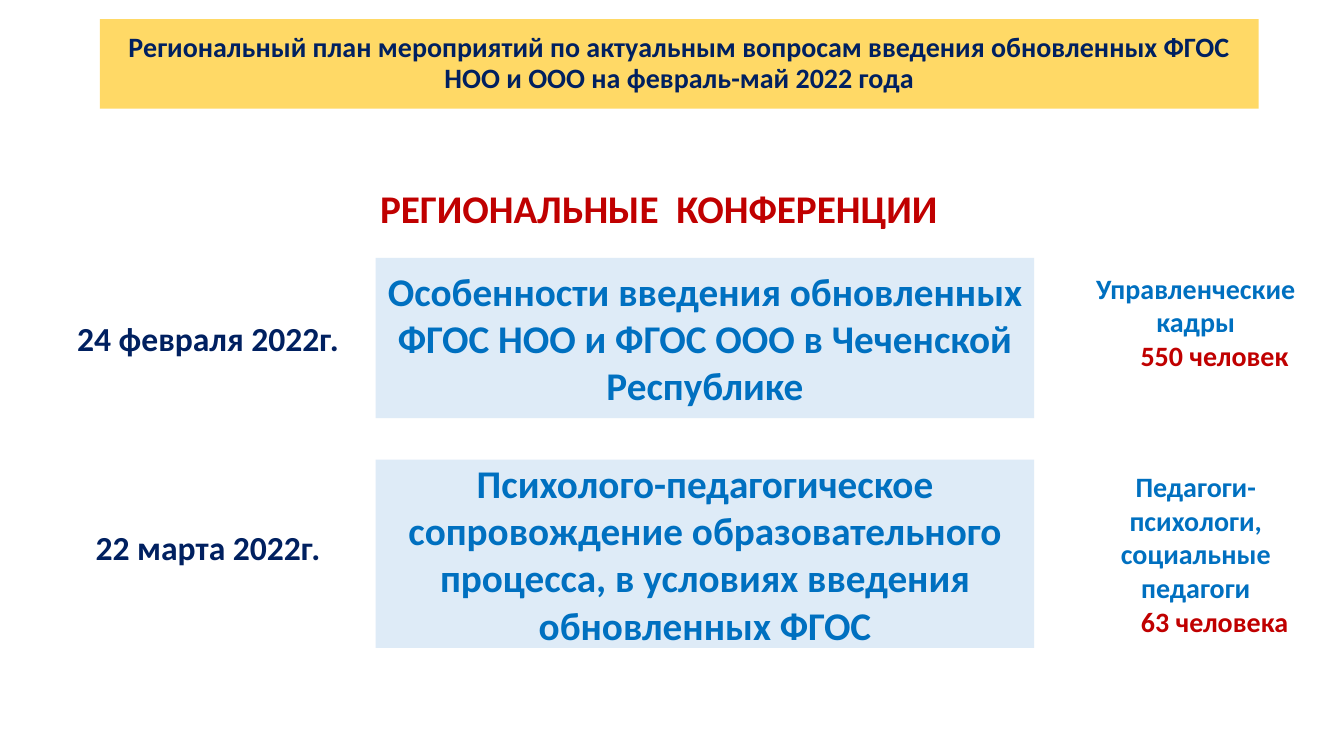
from dataclasses import dataclass

from pptx import Presentation
from pptx.dml.color import RGBColor
from pptx.enum.shapes import MSO_SHAPE as Preset
from pptx.enum.text import MSO_ANCHOR as Anchor, MSO_AUTO_SIZE as AutoSize, PP_ALIGN as Align
from pptx.util import Cm, Pt


@dataclass(frozen=True)
class Theme:
    """Fonts, type sizes and colours of the slide."""
    font: str = "Calibri"
    small: int = 20
    medium: int = 24
    large: int = 28
    navy: str = "002060"
    blue: str = "0070C0"
    red: str = "C00000"
    white: str = "FFFFFF"
    pale_blue: str = "DEEBF7"
    yellow: str = "FFD966"


THEME = Theme()

TITLE = ("Региональный план мероприятий по актуальным вопросам введения "
         "обновленных ФГОС НОО и ООО на февраль-май 2022 года")
HEADING = "РЕГИОНАЛЬНЫЕ  КОНФЕРЕНЦИИ"

CONFERENCES = [
    dict(date="24 февраля 2022г.",
         topic="Особенности введения обновленных ФГОС НОО и ФГОС ООО в Чеченской Республике",
         audience="Управленческие кадры", count="550 человек",
         top=6.5, date_top=7.7, topic_height=4.04, audience_height=3.2),
    dict(date="22 марта 2022г.",
         topic="Психолого-педагогическое сопровождение образовательного процесса, "
               "в условиях введения обновленных ФГОС",
         audience="Педагоги-психологи, социальные педагоги", count="63 человека",
         top=11.58, date_top=12.95, topic_height=4.75, audience_height=4.75),
]


def style_paragraph(para, text, size, color):
    """Write centred bold text into a paragraph."""
    para.text = text
    para.alignment = Align.CENTER
    para.font.name = THEME.font
    para.font.size = Pt(size)
    para.font.bold = True
    para.font.color.rgb = RGBColor.from_string(color)


def fill_solid(shape, color):
    """Give a shape one plain fill."""
    shape.fill.solid()
    shape.fill.fore_color.rgb = RGBColor.from_string(color)


def add_panel(page, left, top, width, height, fill, text, size, color):
    """Add a borderless rectangle with centred text and return its text frame."""
    panel = page.shapes.add_shape(Preset.RECTANGLE, Cm(left), Cm(top), Cm(width), Cm(height))
    panel.shadow.inherit = False
    panel.line.fill.background()
    fill_solid(panel, fill)
    frame = panel.text_frame
    frame.word_wrap = True
    frame.vertical_anchor = Anchor.MIDDLE
    style_paragraph(frame.paragraphs[0], text, size, color)
    return frame


def set_title(page):
    """Place and format the title placeholder as a yellow band."""
    title = page.shapes.title
    title.left, title.top, title.width, title.height = Cm(2.52), Cm(0.48), Cm(29.2), Cm(2.26)
    fill_solid(title, THEME.yellow)
    frame = title.text_frame
    frame.word_wrap = True
    frame.auto_size = AutoSize.NONE
    frame.vertical_anchor = Anchor.MIDDLE
    para = frame.paragraphs[0]
    style_paragraph(para, TITLE, THEME.small, THEME.navy)
    para.line_spacing = 0.9


def add_heading(page):
    """Add the red section heading."""
    box = page.shapes.add_textbox(Cm(9.25), Cm(4.52), Cm(14.7), Cm(1.45))
    box.text_frame.word_wrap = False
    box.text_frame.auto_size = AutoSize.SHAPE_TO_FIT_TEXT
    style_paragraph(box.text_frame.paragraphs[0], HEADING, THEME.large, THEME.red)


def add_conference(page, date, topic, audience, count,
                   top, date_top, topic_height, audience_height):
    """Add one row: date, topic and audience with its head count."""
    add_panel(page, 1.37, date_top, 7.75, 1.65, THEME.white, date, THEME.medium, THEME.navy)
    add_panel(page, 9.47, top, 16.59, topic_height, THEME.pale_blue,
              topic, THEME.large, THEME.blue)
    frame = add_panel(page, 27.05, top, 6.17, audience_height, THEME.white,
                      audience, THEME.small, THEME.blue)
    para = frame.add_paragraph()
    style_paragraph(para, count, THEME.small, THEME.red)
    para._p.get_or_add_pPr().set("marL", str(Cm(0.95)))


def main():
    """Build the slide and save the deck."""
    deck = Presentation()
    deck.slide_width, deck.slide_height = Cm(33.87), Cm(19.05)
    page = deck.slides.add_slide(deck.slide_layouts.get_by_name("Title Only"))
    set_title(page)
    add_heading(page)
    for conference in CONFERENCES:
        add_conference(page, **conference)
    deck.save("out.pptx")


if __name__ == "__main__":
    main()
